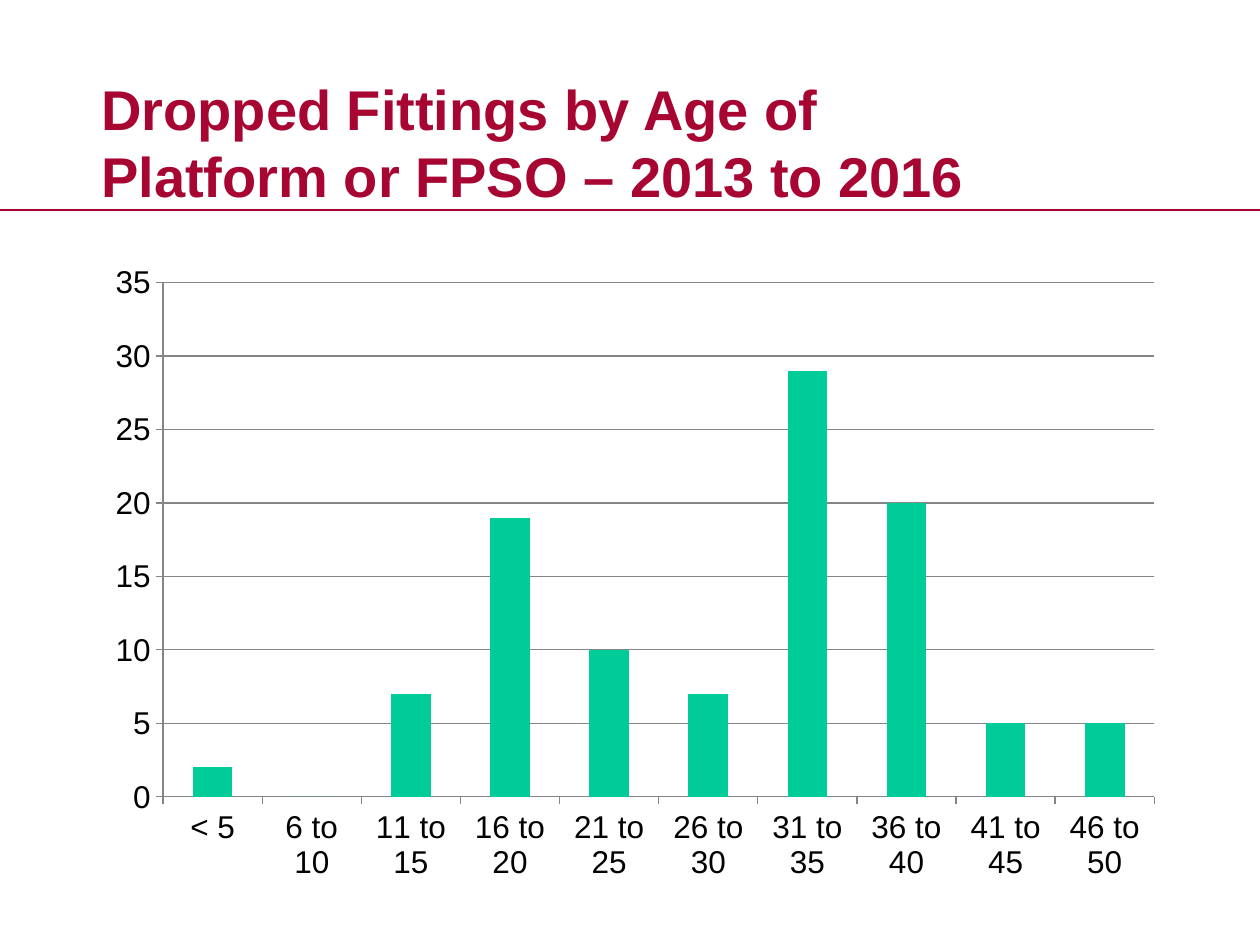
from dataclasses import dataclass

from lxml import etree
from pptx import Presentation
from pptx import util as u
from pptx.chart.data import CategoryChartData
from pptx.dml.color import RGBColor
from pptx.enum import chart as ch, shapes, text
from pptx.oxml.ns import qn

PX = u.Inches(1) // 126


@dataclass(frozen=True)
class Theme:
    """Colours, font and type sizes of the slide."""
    head: RGBColor = RGBColor(0xA7, 0x05, 0x32)
    bar: RGBColor = RGBColor(0x00, 0xCC, 0x99)
    ink: RGBColor = RGBColor(0, 0, 0)
    grid: RGBColor = RGBColor(0x86, 0x86, 0x86)
    font: str = "Arial"
    title: int = 32
    label: int = 18


T = Theme()
AGES = ["< 5"] + [f"{n} to {n + 4 + (n == 6) * 0}" for n in range(6, 50, 5)]
DROPS = [2, 0, 7, 19, 10, 7, 29, 20, 5, 5]


def emu(*vals):
    """Turn px lengths into EMU."""
    return [v * PX for v in vals]


def style(font, size, color):
    """Set face, size and colour of a font."""
    font.name, font.size = T.font, u.Pt(size)
    font.color.rgb = color


def rule(slide, x, y, w):
    """Draw the level line under the title."""
    line = slide.shapes.add_connector(
        shapes.MSO_CONNECTOR.STRAIGHT, *emu(x, y, x + w, y))
    line.line.color.rgb = T.head
    line.line.width = u.Pt(1.25)
    etree.SubElement(line._element.spPr, qn("a:effectLst"))


def title(slide, x, y, w, h):
    """Place the bold title in its box."""
    frame = slide.shapes.add_textbox(*emu(x, y, w, h)).text_frame
    frame.word_wrap = True
    frame.vertical_anchor = text.MSO_ANCHOR.MIDDLE
    run = frame.paragraphs[0].add_run()
    run.text = "Dropped Fittings by Age of Platform or FPSO – 2013 to 2016"
    style(run.font, T.title, T.head)
    run.font.bold = True


def bars(slide, x, y, w, h):
    """Place the column chart of drops by age."""
    data = CategoryChartData()
    data.categories = AGES
    data.add_series("Series 1", DROPS)
    chart = slide.shapes.add_chart(
        ch.XL_CHART_TYPE.COLUMN_CLUSTERED, *emu(x, y, w, h), data).chart
    chart.has_legend = chart.has_title = False
    style(chart.font, T.label, T.ink)
    plot = chart.plots[0]
    plot.gap_width, plot.vary_by_categories = 150, False
    fill = plot.series[0].format.fill
    fill.solid()
    fill.fore_color.rgb = T.bar
    vals, cats = chart.value_axis, chart.category_axis
    vals.minimum_scale, vals.maximum_scale, vals.major_unit = 0, 35, 5
    vals.has_major_gridlines = True
    for axis in (vals, cats):
        axis.major_tick_mark = ch.XL_TICK_MARK.OUTSIDE
    for part in (vals, cats, vals.major_gridlines):
        part.format.line.color.rgb = T.grid
        part.format.line.width = u.Pt(0.75)


def main():
    """Build and save the slide."""
    deck = Presentation()
    deck.slide_width, deck.slide_height = emu(1260, 945)
    slide = deck.slides.add_slide(deck.slide_layouts[6])
    rule(slide, 0, 210, 1260)
    title(slide, 89, 83, 941, 117)
    bars(slide, 94, 252, 1082, 641)
    deck.save("out.pptx")


if __name__ == "__main__":
    main()
